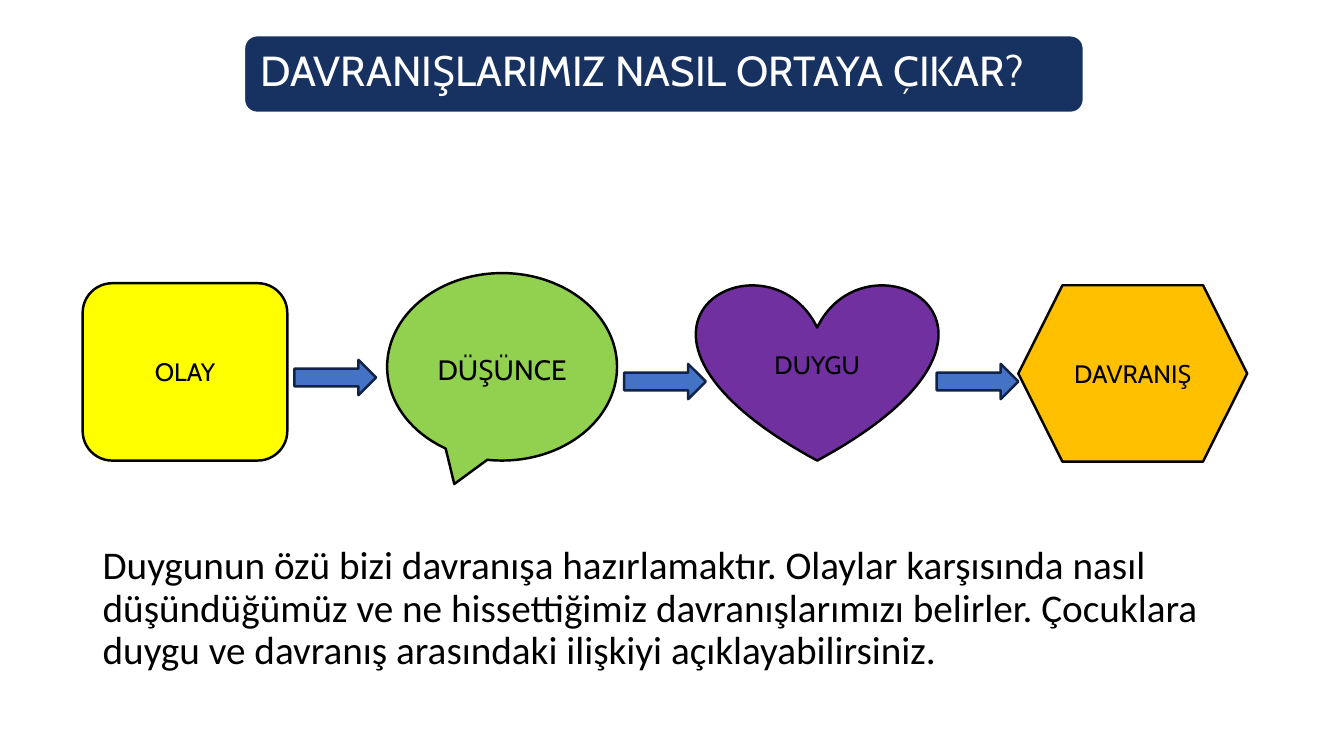
from pptx import Presentation
from pptx.dml.color import RGBColor
from pptx.enum.shapes import MSO_SHAPE
from pptx.enum.text import MSO_ANCHOR, PP_ALIGN
from pptx.util import Inches, Pt

ROUND_RECT = MSO_SHAPE.ROUNDED_RECTANGLE
CALLOUT = MSO_SHAPE.OVAL_CALLOUT
HEART = MSO_SHAPE.HEART
HEXAGON = MSO_SHAPE.HEXAGON
ARROW = MSO_SHAPE.RIGHT_ARROW
MIDDLE = MSO_ANCHOR.MIDDLE
LEFT, CENTER = PP_ALIGN.LEFT, PP_ALIGN.CENTER

BLACK = RGBColor(0x00, 0x00, 0x00)
WHITE = RGBColor(0xFF, 0xFF, 0xFF)
NAVY = RGBColor(0x17, 0x31, 0x60)
YELLOW = RGBColor(0xFF, 0xFF, 0x00)
GREEN = RGBColor(0x92, 0xD0, 0x50)
PURPLE = RGBColor(0x70, 0x30, 0xA0)
ORANGE = RGBColor(0xFF, 0xC0, 0x00)
BLUE = RGBColor(0x44, 0x72, 0xC4)
DARK_BLUE = RGBColor(0x12, 0x24, 0x46)

SLIDE_W, SLIDE_H = 13.33, 7.5
ARROW_W, ARROW_H = 0.81, 0.35

# Shape, label, size, fill, left, top, width, height, adjustments, line spacing;
# left and top are offsets within the flow box
STEPS = [
    (ROUND_RECT, "OLAY", 18, YELLOW, 0, 0.1, 2.03, 1.76, [0.167], 1),
    (CALLOUT, "DÜŞÜNCE", 20, GREEN, 3.02, 0, 2.28, 1.86, [-0.208, 0.625], 1.15),
    (HEART, "DUYGU", 18, PURPLE, 6.09, 0.1, 2.39, 1.76, [], 1),
    (HEXAGON, "DAVRANIŞ", 18, ORANGE, 9.28, 0.12, 2.27, 1.75, [0.25], 1),
]
ARROWS = [(2.1, 0.86), (5.37, 0.9), (8.47, 0.9)]

TITLE = "DAVRANIŞLARIMIZ NASIL ORTAYA ÇIKAR?"
MESSAGE = ("Duygunun özü bizi davranışa hazırlamaktır. Olaylar karşısında nasıl "
           "düşündüğümüz ve ne hissettiğimiz davranışlarımızı belirler. Çocuklara "
           "duygu ve davranış arasındaki ilişkiyi açıklayabilirsiniz.")


def add_figure(slide, kind, box, fill, line, adjustments=()):
    sp = slide.shapes.add_shape(kind, *map(Inches, box))
    sp.shadow.inherit = False
    sp.fill.solid()
    sp.fill.fore_color.rgb = fill
    sp.line.color.rgb = line
    sp.line.width = Pt(1.75)
    for i, value in enumerate(adjustments):
        sp.adjustments[i] = value
    return sp


def write(sp, text, size, font, color, align, spacing):
    tf = sp.text_frame
    tf.word_wrap = True
    tf.vertical_anchor = MIDDLE
    p = tf.paragraphs[0]
    p.alignment = align
    p.line_spacing = spacing
    r = p.add_run()
    r.text = text
    r.font.size = Pt(size)
    r.font.name = font
    r.font.color.rgb = color
    return tf


def add_title(slide, x, y, w, h):
    add_figure(slide, ROUND_RECT, (x, y, w, h), NAVY, WHITE, [0.167])
    sp = slide.shapes.add_textbox(*map(Inches, (x + 0.04, y + 0.03, w - 0.07, h - 0.08)))
    tf = write(sp, TITLE, 30, "Cabin", WHITE, LEFT, 0.9)
    tf.margin_left = tf.margin_right = Inches(0.12)
    tf.margin_top = tf.margin_bottom = Inches(0.12)


def add_flow(slide, x, y):
    for kind, label, size, fill, dx, dy, w, h, adjustments, spacing in STEPS:
        sp = add_figure(slide, kind, (x + dx, y + dy, w, h), fill, BLACK, adjustments)
        write(sp, label, size, "Cabin", BLACK, CENTER, spacing)
    for dx, dy in ARROWS:
        add_figure(slide, ARROW, (x + dx, y + dy, ARROW_W, ARROW_H), BLUE, DARK_BLUE)


def add_message(slide, x, y, w, h):
    sp = slide.shapes.add_textbox(*map(Inches, (x, y, w, h)))
    write(sp, MESSAGE, 28, "Calibri", BLACK, LEFT, 0.9)


def main():
    prs = Presentation()
    prs.slide_width, prs.slide_height = Inches(SLIDE_W), Inches(SLIDE_H)
    slide = prs.slides.add_slide(prs.slide_layouts[6])
    add_title(slide, 2.42, 0.35, 8.33, 0.77)
    add_flow(slide, 0.82, 2.71)
    add_message(slide, 0.92, 5.32, 11.5, 1.45)
    prs.save("out.pptx")


if __name__ == "__main__":
    main()
